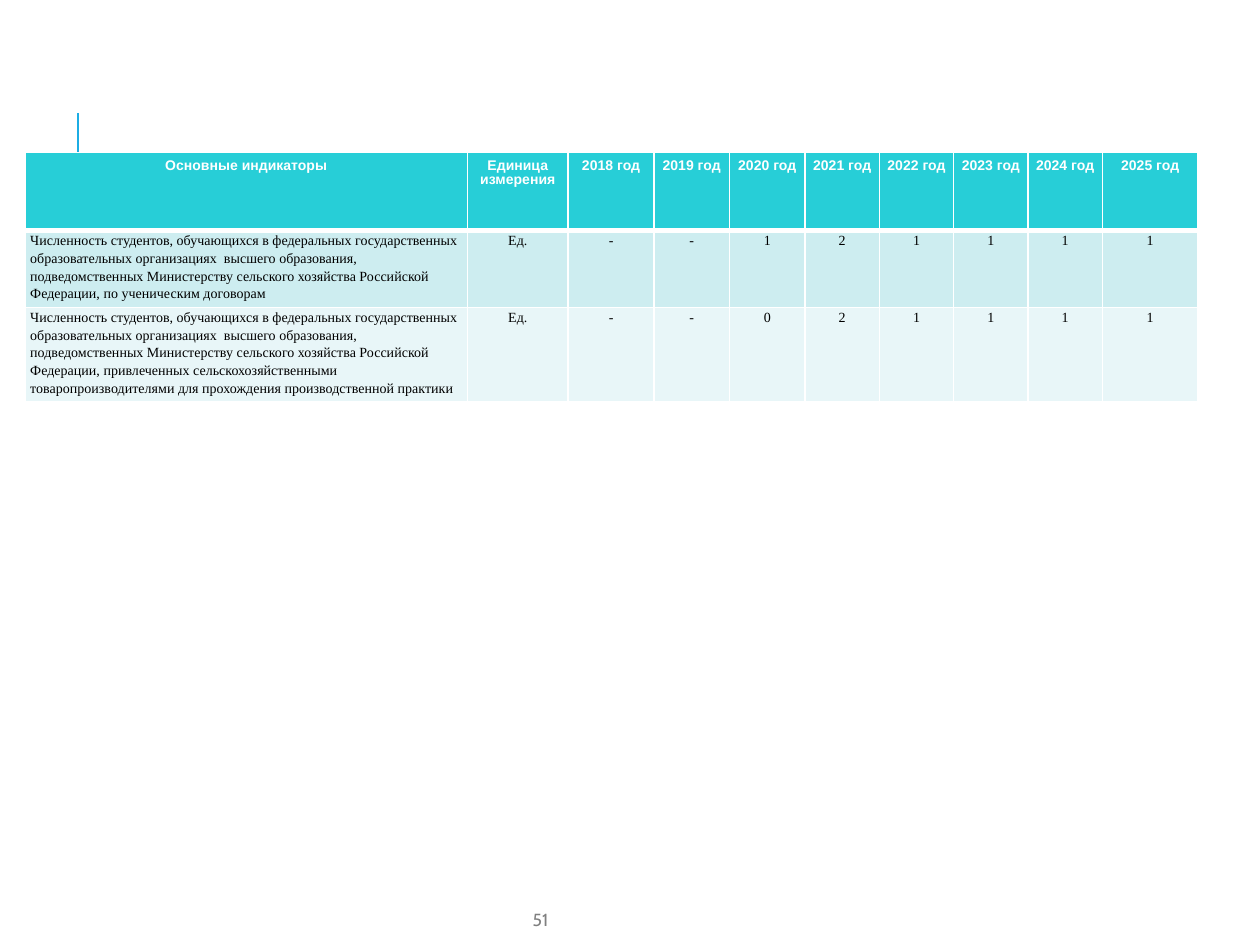
from dataclasses import dataclass

from lxml import etree
from pptx import Presentation
from pptx.dml.color import RGBColor
from pptx.enum.shapes import MSO_CONNECTOR
from pptx.enum.text import MSO_ANCHOR, PP_ALIGN
from pptx.oxml.ns import qn
from pptx.util import Inches, Pt

LEFT, CENTER = PP_ALIGN.LEFT, PP_ALIGN.CENTER
MIDDLE = MSO_ANCHOR.MIDDLE
STRAIGHT = MSO_CONNECTOR.STRAIGHT

GRID_COLS, GRID_ROWS = 100, 75


@dataclass(frozen=True)
class Theme:
    accent: str = "1CADE4"
    header_fill: str = "27CED7"
    band_fills: tuple = ("CDEDF0", "E8F6F8")
    white: str = "FFFFFF"
    black: str = "000000"
    muted: str = "808080"
    header_font: str = "Arial"
    body_font: str = "Times New Roman"
    number_font: str = "Cabin"
    table_size: float = 8
    number_size: float = 10
    accent_line: float = 1.5
    border: float = 1
    header_border: float = 3


class SlideBuilder:
    """Places elements on a slide in grid columns and rows."""

    def __init__(self, prs, theme):
        self.theme = theme
        self.slide = prs.slides.add_slide(prs.slide_layouts[6])
        self.col = prs.slide_width / GRID_COLS
        self.row = prs.slide_height / GRID_ROWS

    def x(self, cols):
        return round(cols * self.col)

    def y(self, rows):
        return round(rows * self.row)

    def font(self, p, name, size, color, bold=False):
        p.font.name, p.font.size, p.font.bold = name, Pt(size), bold
        p.font.color.rgb = RGBColor.from_string(color)

    def line(self, x1, y1, x2, y2):
        sp = self.slide.shapes.add_connector(
            STRAIGHT, self.x(x1), self.y(y1), self.x(x2), self.y(y2))
        sp.line.color.rgb = RGBColor.from_string(self.theme.accent)
        sp.line.width = Pt(self.theme.accent_line)
        etree.SubElement(sp._element.spPr, qn("a:effectLst"))

    def page_number(self, text, left, top, width, height):
        sp = self.slide.shapes.add_textbox(
            self.x(left), self.y(top), self.x(width), self.y(height))
        tf = sp.text_frame
        tf.word_wrap, tf.vertical_anchor = True, MIDDLE
        p = tf.paragraphs[0]
        p.text = text
        self.font(p, self.theme.number_font, self.theme.number_size, self.theme.muted)

    def borders(self, cell, top, bottom):
        """Draw white cell borders; they must precede the fill element."""
        side = self.theme.border
        widths = {"lnL": side, "lnR": side, "lnT": top, "lnB": bottom}
        tc_pr = cell._tc.get_or_add_tcPr()
        for i, (tag, width) in enumerate(widths.items()):
            ln = etree.Element(qn(f"a:{tag}"), w=str(Pt(width)))
            fill = etree.SubElement(ln, qn("a:solidFill"))
            etree.SubElement(fill, qn("a:srgbClr"), val=self.theme.white)
            tc_pr.insert(i, ln)

    def cell(self, cell, text, row, col):
        t = self.theme
        header = row == 0
        fill = t.header_fill if header else t.band_fills[(row - 1) % 2]
        cell.fill.solid()
        cell.fill.fore_color.rgb = RGBColor.from_string(fill)
        cell.margin_left = cell.margin_right = self.x(0.5 if header else 0.4)
        cell.margin_top = cell.margin_bottom = self.y(0.5 if header else 0)
        p = cell.text_frame.paragraphs[0]
        p.text = text
        p.alignment = CENTER if header or col else LEFT
        p.line_spacing = 0.9 if header else 1.15
        if header:
            self.font(p, t.header_font, t.table_size, t.white, bold=True)
        else:
            self.font(p, t.body_font, t.table_size, t.black)
        self.borders(cell, top=t.header_border if row == 1 else t.border,
                     bottom=t.header_border if header else t.border)

    def table(self, left, top, widths, heights, rows):
        table = self.slide.shapes.add_table(
            len(rows), len(widths), self.x(left), self.y(top),
            self.x(sum(widths)), self.y(sum(heights))).table
        table.first_row = table.horz_banding = False
        for column, width in zip(table.columns, widths):
            column.width = self.x(width)
        for r, (height, texts) in enumerate(zip(heights, rows)):
            table.rows[r].height = self.y(height)
            for c, text in enumerate(texts):
                self.cell(table.cell(r, c), text, r, c)


STUDENTS = ("Численность студентов, обучающихся в федеральных государственных "
            "образовательных организациях  высшего образования, подведомственных "
            "Министерству сельского хозяйства Российской Федерации, ")
INDICATORS = [
    ["Основные индикаторы", "Единица измерения",
     *(f"{year} год" for year in range(2018, 2026))],
    [STUDENTS + "по ученическим договорам", "Ед.", *"--121111"],
    [STUDENTS + "привлеченных сельскохозяйственными товаропроизводителями "
     "для прохождения производственной практики", "Ед.", *"--021111"],
]
COLUMN_WIDTHS = [35.1, 8, 6.8, 6, 6, 5.9, 5.9, 5.9, 5.9, 7.6]
ROW_HEIGHTS = [6.2, 6.1, 7.5]


def main():
    prs = Presentation()
    prs.slide_width, prs.slide_height = Inches(10), Inches(7.5)
    s = SlideBuilder(prs, Theme())
    s.line(6.2, 19, 6.2, 9)
    s.table(2, 12.1, COLUMN_WIDTHS, ROW_HEIGHTS, INDICATORS)
    s.page_number("51", 41.3, 71, 20, 4)
    prs.save("out.pptx")


if __name__ == "__main__":
    main()
